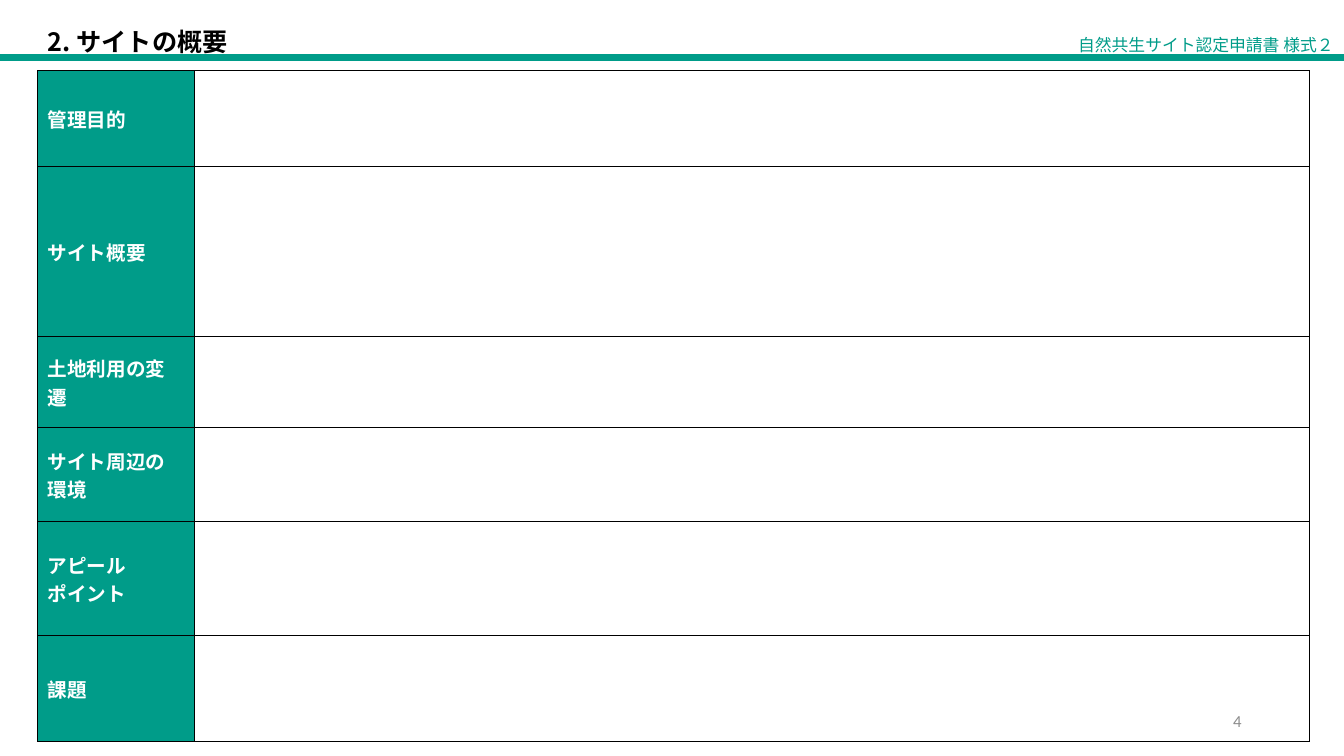
import pptx
import pptx.util
import pptx.oxml
import pptx.oxml.ns
import pptx.dml.color
import pptx.enum.text
import pptx.enum.shapes

Pt = pptx.util.Pt
RGBColor = pptx.dml.color.RGBColor
PP_ALIGN = pptx.enum.text.PP_ALIGN
MIDDLE = pptx.enum.text.MSO_ANCHOR.MIDDLE

GREEN = RGBColor(0x00, 0x9C, 0x89)
WHITE = RGBColor(0xFF, 0xFF, 0xFF)
BLACK = RGBColor(0x00, 0x00, 0x00)
GREY = RGBColor(0x8C, 0x8C, 0x8C)
JP_FONT = "Noto Sans CJK JP"
NS = pptx.oxml.ns.nsdecls("a")


def write(tf, text, size, color, bold=False, font=JP_FONT, align=PP_ALIGN.LEFT):
    """Fill a text frame with one formatted paragraph per line of text."""
    tf.word_wrap = True
    for i, line in enumerate(text.split("\n")):
        p = tf.paragraphs[0] if i == 0 else tf.add_paragraph()
        p.alignment = align
        r = p.add_run()
        r.text = line
        r.font.size = Pt(size)
        r.font.bold = bold
        r.font.name = font
        r.font.color.rgb = color
        r.font._element.append(
            pptx.oxml.parse_xml(f'<a:ea {NS} typeface="{font}"/>'))


prs = pptx.Presentation()
prs.slide_width, prs.slide_height = Pt(960), Pt(540)
s = prs.slides.add_slide(prs.slide_layouts[5])

# Page number
number = s.shapes.add_textbox(Pt(678), Pt(500.5), Pt(216), Pt(28.75))
number.text_frame.vertical_anchor = MIDDLE
write(number.text_frame, "4", 12, GREY, font="Calibri", align=PP_ALIGN.RIGHT)

# Site overview table
rows = [
    ("管理目的", 68.6),
    ("サイト概要", 121.4),
    ("土地利用の変遷", 65),
    ("サイト周辺の\n環境", 67.1),
    ("アピール\nポイント", 81.4),
    ("課題", 75.4),
]
table = s.shapes.add_table(
    len(rows), 2, Pt(26.9), Pt(50.6), Pt(908.4),
    Pt(sum(height for _, height in rows))).table
table.first_row = table.horz_banding = False
table.columns[0].width, table.columns[1].width = Pt(112), Pt(796.4)
for row, (label, height) in zip(table.rows, rows):
    row.height = Pt(height)
    for cell in row.cells:
        cell.vertical_anchor = MIDDLE
        for side in ("lnL", "lnR", "lnT", "lnB"):
            cell._tc.get_or_add_tcPr().append(pptx.oxml.parse_xml(
                f'<a:{side} {NS} w="{Pt(1)}"><a:solidFill>'
                f'<a:srgbClr val="{BLACK}"/></a:solidFill></a:{side}>'))
        cell.fill.background()
    head = row.cells[0]
    head.fill.solid()
    head.fill.fore_color.rgb = GREEN
    write(head.text_frame, label, 14, WHITE, bold=True)

# Header
form = s.shapes.add_textbox(Pt(621.5), Pt(20.9), Pt(338.4), Pt(21.6))
form.text_frame.vertical_anchor = MIDDLE
write(form.text_frame, "自然共生サイト認定申請書 様式２", 12, GREEN, align=PP_ALIGN.RIGHT)

title = s.shapes.title
title.left, title.top, title.width, title.height = Pt(26.9), Pt(15), Pt(480), Pt(28.8)
title.text_frame.auto_size = pptx.enum.text.MSO_AUTO_SIZE.NONE
title.text_frame.vertical_anchor = MIDDLE
write(title.text_frame, "2. サイトの概要", 18, BLACK, bold=True, align=PP_ALIGN.JUSTIFY)

bar = s.shapes.add_shape(
    pptx.enum.shapes.MSO_SHAPE.RECTANGLE, Pt(0), Pt(39), Pt(960), Pt(4))
bar.shadow.inherit = False
bar.fill.solid()
bar.fill.fore_color.rgb = GREEN
bar.line.color.rgb = GREEN
bar.line.width = Pt(1)

prs.save("out.pptx")
